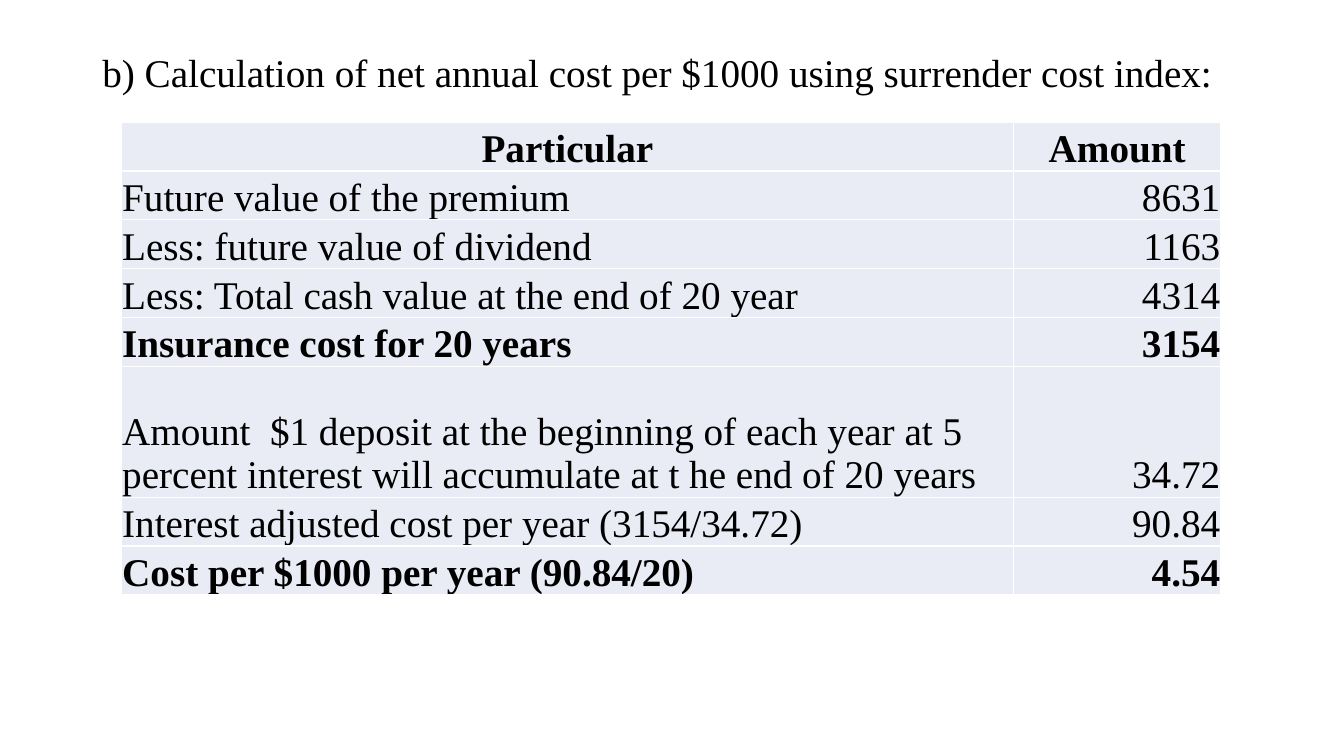
from pptx import Presentation
from pptx.dml.color import RGBColor
from pptx.enum.text import MSO_ANCHOR, PP_ALIGN
from pptx.oxml import parse_xml
from pptx.oxml.ns import nsdecls
from pptx.util import Cm, Pt

COLOURS = {"text": "000000", "cell": "E9EBF5", "border": "FFFFFF"}
FONT_NAME = "Times New Roman"
FONT_SIZE = Pt(28)
HEADING = "b) Calculation of net annual cost per $1000 using surrender cost index:"
HEADERS = ("Particular", "Amount")
COST_ROWS = [
    ("Future value of the premium", "8631", False),
    ("Less: future value of dividend", "1163", False),
    ("Less: Total cash value at the end of 20 year", "4314", False),
    ("Insurance cost for 20 years", "3154", True),
    ("Amount  $1 deposit at the beginning of each year at 5 percent interest "
     "will accumulate at t he end of 20 years", "34.72", False),
    ("Interest adjusted cost per year (3154/34.72)", "90.84", False),
    ("Cost per $1000 per year (90.84/20)", "4.54", True),
]
COLUMN_WIDTHS = (Cm(22.48), Cm(5.23))
ROW_HEIGHT = Cm(1.23)
DEPOSIT_ROW = 5
DEPOSIT_ROW_HEIGHT = Cm(3.3)


def add_span(para, text, bold=False):
    span = para.add_run()
    span.text = text
    span.font.name = FONT_NAME
    span.font.size = FONT_SIZE
    span.font.bold = bold
    span.font.color.rgb = RGBColor.from_string(COLOURS["text"])


def add_heading(page):
    box = page.shapes.add_textbox(Cm(2.33), Cm(1.22), Cm(29.21), Cm(1.5))
    box.text_frame.word_wrap = True
    para = box.text_frame.paragraphs[0]
    para.line_spacing = 0.9
    add_span(para, HEADING)


def add_borders(cell):
    properties = cell._tc.get_or_add_tcPr()
    for side in ("lnL", "lnR", "lnT", "lnB"):
        properties.append(parse_xml(
            f'<a:{side} {nsdecls("a")} w="{Pt(1)}"><a:solidFill>'
            f'<a:srgbClr val="{COLOURS["border"]}"/></a:solidFill></a:{side}>'
        ))


def fill_cell(cell, text, alignment, bold):
    cell.margin_left = cell.margin_right = cell.margin_top = Cm(0.02)
    cell.margin_bottom = Cm(0)
    cell.vertical_anchor = MSO_ANCHOR.BOTTOM
    add_borders(cell)
    cell.fill.solid()
    cell.fill.fore_color.rgb = RGBColor.from_string(COLOURS["cell"])
    para = cell.text_frame.paragraphs[0]
    para.alignment = alignment
    add_span(para, text, bold)


def add_cost_table(page):
    row_count = len(COST_ROWS) + 1
    table = page.shapes.add_table(
        row_count, len(HEADERS), Cm(3.06), Cm(3.08),
        sum(COLUMN_WIDTHS), ROW_HEIGHT * (row_count - 1) + DEPOSIT_ROW_HEIGHT,
    ).table
    for column, width in zip(table.columns, COLUMN_WIDTHS):
        column.width = width
    for index, row in enumerate(table.rows):
        row.height = DEPOSIT_ROW_HEIGHT if index == DEPOSIT_ROW else ROW_HEIGHT
    for column, header in enumerate(HEADERS):
        fill_cell(table.cell(0, column), header, PP_ALIGN.CENTER, True)
    for index, (particular, amount, bold) in enumerate(COST_ROWS, start=1):
        fill_cell(table.cell(index, 0), particular, PP_ALIGN.LEFT, bold)
        fill_cell(table.cell(index, 1), amount, PP_ALIGN.RIGHT, bold)


def main():
    deck = Presentation()
    deck.slide_width = Cm(33.87)
    deck.slide_height = Cm(19.05)
    page = deck.slides.add_slide(deck.slide_layouts[6])
    add_heading(page)
    add_cost_table(page)
    deck.save("out.pptx")


if __name__ == "__main__":
    main()
